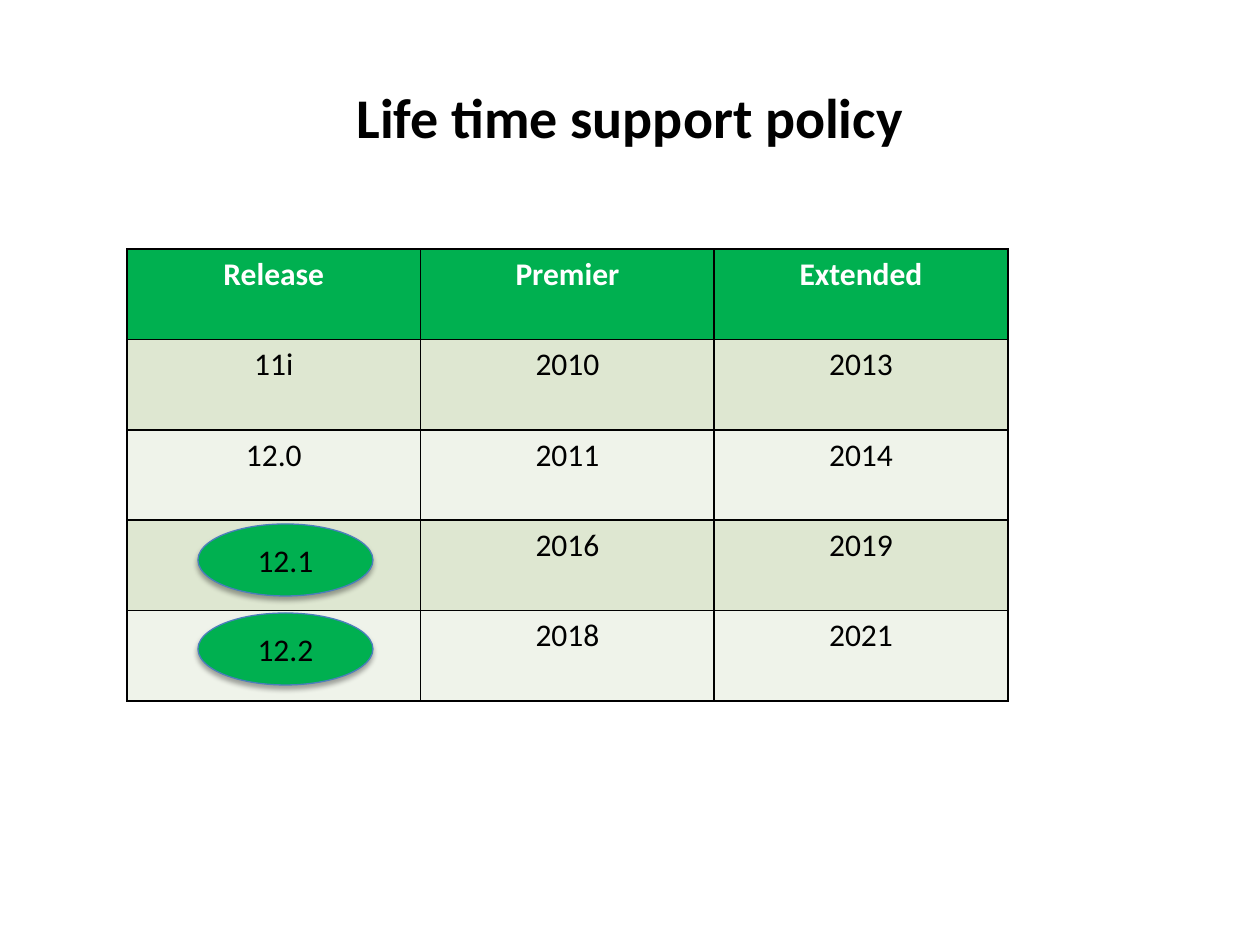
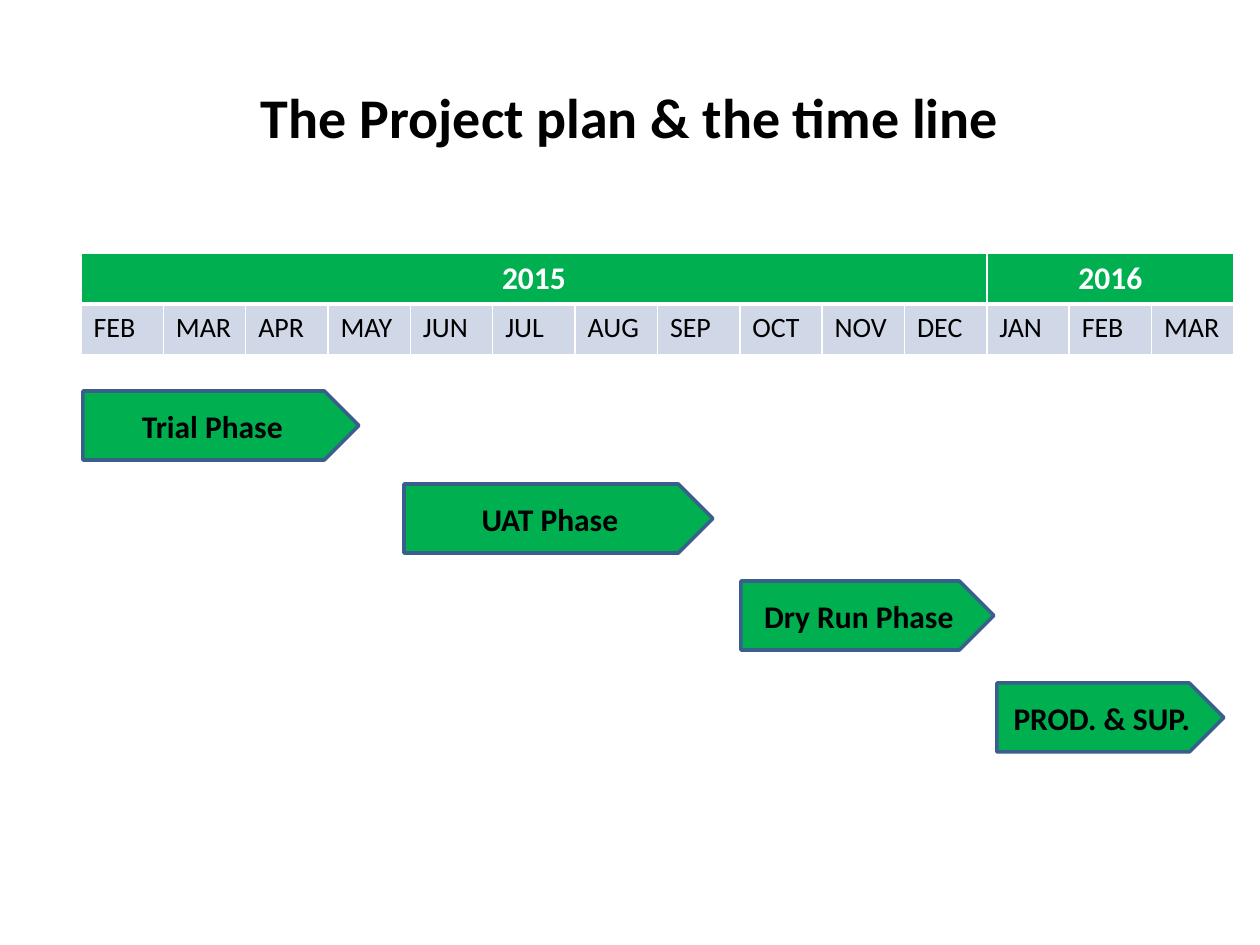
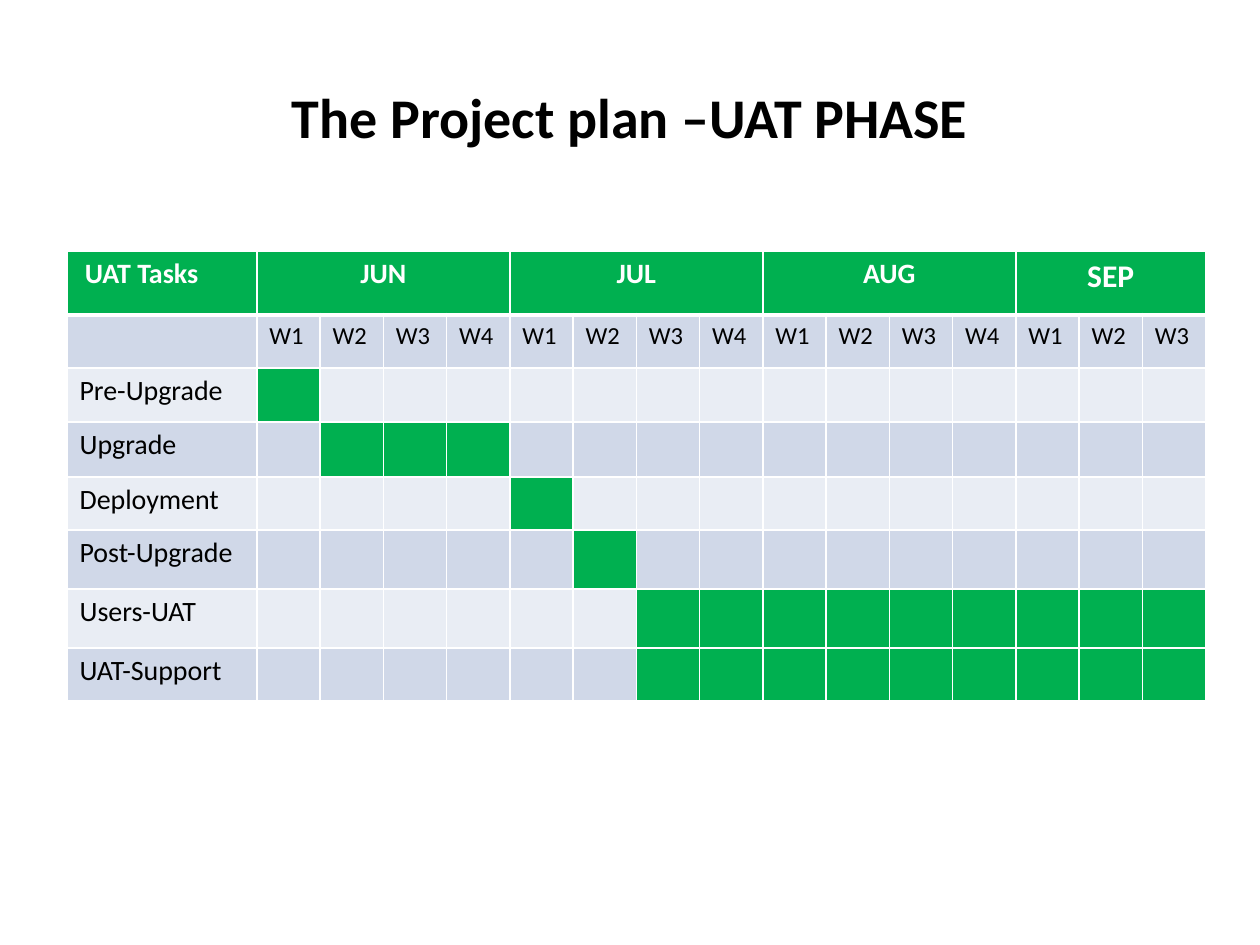
from dataclasses import dataclass
from typing import Optional

from lxml import etree
from pptx import Presentation
from pptx import util as u
from pptx.dml.color import RGBColor
from pptx.enum import shapes, text
from pptx.oxml.ns import qn

PX_PER_INCH = 126
FONT = "Calibri"
GREEN, WHITE, BLACK = "00B050", "FFFFFF", "000000"
BLUE_BANDS = ("D0D8E8", "E9EDF4")
GREEN_BANDS = ("DEE7D1", "EFF3EA")
OVAL_LINE, PHASE_LINE = "4B7EBC", "3A5F8C"
LEFT, CENTER = text.PP_ALIGN.LEFT, text.PP_ALIGN.CENTER
OVAL, PENTAGON = shapes.MSO_SHAPE.OVAL, shapes.MSO_SHAPE.PENTAGON


@dataclass(frozen=True)
class Box:
    x: int
    y: int
    w: int
    h: int


@dataclass(frozen=True)
class Style:
    size: int
    color: str = BLACK
    bold: bool = False
    align: text.PP_ALIGN = CENTER


@dataclass(frozen=True)
class Cell:
    label: str
    fill: str
    style: Style
    span: int = 1
    indent: int = 0


@dataclass(frozen=True)
class Label:
    """A filled shape with one line of text."""
    label: str
    box: Box
    kind: shapes.MSO_SHAPE
    line: str
    line_width: float
    style: Style
    shadow: bool = False


TITLE = Style(32, bold=True)
HEADER = Style(18, WHITE, True)
MONTH_HEADER = Style(16, WHITE, True)
TASK_HEADER = Style(16, WHITE, True, LEFT)
YEAR = Style(18)
MONTH = Style(16, align=LEFT)
WEEK = Style(14, align=LEFT)
PHASE = Style(18, bold=True)


def px(n: float) -> u.Emu:
    return u.Emu(round(n * 914400 / PX_PER_INCH))


def rgb(color: str) -> RGBColor:
    return RGBColor.from_string(color)


def place(box: Box) -> tuple:
    return px(box.x), px(box.y), px(box.w), px(box.h)


def write(tf, label: str, style: Style) -> None:
    p = tf.paragraphs[0]
    p.alignment = style.align
    if not label:
        return
    r = p.add_run()
    r.text = label
    r.font.name = FONT
    r.font.size = u.Pt(style.size)
    r.font.bold = style.bold
    r.font.color.rgb = rgb(style.color)


def add_slide(prs, title: str):
    slide = prs.slides.add_slide(prs.slide_layouts[5])
    sp = slide.shapes.title
    sp.left, sp.top, sp.width, sp.height = place(Box(63, 38, 1134, 157))
    sp.text_frame.vertical_anchor = text.MSO_ANCHOR.MIDDLE
    write(sp.text_frame, title, TITLE)
    return slide


def add_color(parent, color: str):
    return etree.SubElement(parent, qn("a:srgbClr"), val=color)


def set_borders(cell, color: str, top: int, bottom: int) -> None:
    """Draw all four cell sides; the left and right ones are 1 pt wide."""
    tc_pr = cell._tc.get_or_add_tcPr()
    widths = {"a:lnL": 1, "a:lnR": 1, "a:lnT": top, "a:lnB": bottom}
    for i, (tag, width) in enumerate(widths.items()):
        ln = etree.Element(qn(tag), w=str(u.Pt(width)))
        add_color(etree.SubElement(ln, qn("a:solidFill")), color)
        tc_pr.insert(i, ln)


def add_table(slide, box: Box, weights: list[int], heights: list[float],
              rows: list[list[Cell]], border: str, header_line: int) -> None:
    """Share the width by weights; header_line is the rule under the first row."""
    table = slide.shapes.add_table(len(rows), len(weights), *place(box)).table
    table.first_row = table.horz_banding = False
    for column, weight in zip(table.columns, weights):
        column.width = px(box.w * weight / sum(weights))
    for i, (row, height) in enumerate(zip(rows, heights)):
        table.rows[i].height = px(height)
        col = 0
        for item in row:
            first = table.cell(i, col)
            for j in range(col, col + item.span):
                cell = table.cell(i, j)
                cell.fill.solid()
                cell.fill.fore_color.rgb = rgb(item.fill)
                set_borders(cell, border, header_line if i == 1 else 1,
                            header_line if i == 0 else 1)
            if item.span > 1:
                first.merge(table.cell(i, col + item.span - 1))
            if item.indent:
                first.margin_left = px(item.indent)
            write(first.text_frame, item.label, item.style)
            col += item.span


def add_shadow(sp) -> None:
    effects = sp._element.spPr.find(qn("a:effectLst"))
    shadow = etree.SubElement(
        effects, qn("a:outerShdw"), blurRad=str(u.Pt(3.1)), dist=str(u.Pt(1.8)),
        dir="5400000", rotWithShape="0")
    etree.SubElement(add_color(shadow, BLACK), qn("a:alpha"), val="35000")


def add_label(slide, item: Label) -> None:
    sp = slide.shapes.add_shape(item.kind, *place(item.box))
    sp.shadow.inherit = False
    if item.shadow:
        add_shadow(sp)
    sp.fill.solid()
    sp.fill.fore_color.rgb = rgb(GREEN)
    sp.line.color.rgb = rgb(item.line)
    sp.line.width = u.Pt(item.line_width)
    sp.text_frame.vertical_anchor = text.MSO_ANCHOR.MIDDLE
    write(sp.text_frame, item.label, item.style)


def support_slide(prs) -> None:
    slide = add_slide(prs, "Life time support policy")
    releases = [("11i", "2010", "2013"), ("12.0", "2011", "2014"),
                ("", "2016", "2019"), ("", "2018", "2021")]
    rows = [[Cell(name, GREEN, HEADER) for name in ("Release", "Premier", "Extended")]]
    rows += [[Cell(value, GREEN_BANDS[i % 2], YEAR) for value in release]
             for i, release in enumerate(releases)]
    add_table(slide, Box(127, 249, 881, 452), [1] * 3, [452 / 5] * 5, rows, BLACK, 1)
    for name, y in (("12.1", 524), ("12.2", 613)):
        add_label(slide, Label(name, Box(198, y, 175, 72), OVAL, OVAL_LINE, 0.75,
                               YEAR, shadow=True))


def timeline_slide(prs) -> None:
    slide = add_slide(prs, "The Project plan & the time line")
    months = "FEB MAR APR MAY JUN JUL AUG SEP OCT NOV DEC JAN FEB MAR".split()
    rows = [[Cell("2015", GREEN, HEADER, 11), Cell("2016", GREEN, HEADER, 3)],
            [Cell(month, BLUE_BANDS[0], MONTH) for month in months]]
    add_table(slide, Box(81, 253, 1153, 102), [1] * len(months), [51] * 2, rows, WHITE, 3)
    phases = [("Trial Phase", 83, 391, 276), ("UAT Phase", 404, 484, 309),
              ("Dry Run Phase", 741, 581, 253), ("PROD. & SUP.", 997, 683, 227)]
    for name, x, y, width in phases:
        add_label(slide, Label(name, Box(x, y, width, 69), PENTAGON, PHASE_LINE, 2, PHASE))


def uat_slide(prs) -> None:
    slide = add_slide(prs, "The Project plan –UAT PHASE")
    months = [("JUN", 4, MONTH_HEADER), ("JUL", 4, MONTH_HEADER),
              ("AUG", 4, MONTH_HEADER), ("SEP", 3, HEADER)]
    weeks = [f"W{n + 1}" for _, count, _ in months for n in range(count)]
    # Each task runs from its first week up to, not including, its end week.
    tasks = [("Pre-Upgrade", 0, 1), ("Upgrade", 1, 4), ("Deployment", 4, 5),
             ("Post-Upgrade", 5, 6), ("Users-UAT", 6, 15), ("UAT-Support", 6, 15)]
    rows = [[Cell("UAT Tasks", GREEN, TASK_HEADER, indent=18)]
            + [Cell(name, GREEN, style, count) for name, count, style in months],
            [Cell(label, BLUE_BANDS[0], WEEK) for label in ["", *weeks]]]
    for i, (name, start, end) in enumerate(tasks):
        band = BLUE_BANDS[(i + 1) % 2]
        rows.append([Cell(name, band, MONTH)]
                    + [Cell("", GREEN if start <= week < end else band, WEEK)
                       for week in range(len(weeks))])
    heights = [64, 53, 54, 55, 53, 59, 59, 53]
    add_table(slide, Box(67, 251, 1139, sum(heights)), [3] + [1] * len(weeks),
              heights, rows, WHITE, 3)


def main() -> None:
    prs = Presentation()
    prs.slide_width, prs.slide_height = px(1260), px(945)
    support_slide(prs)
    timeline_slide(prs)
    uat_slide(prs)
    prs.save("out.pptx")


if __name__ == "__main__":
    main()
